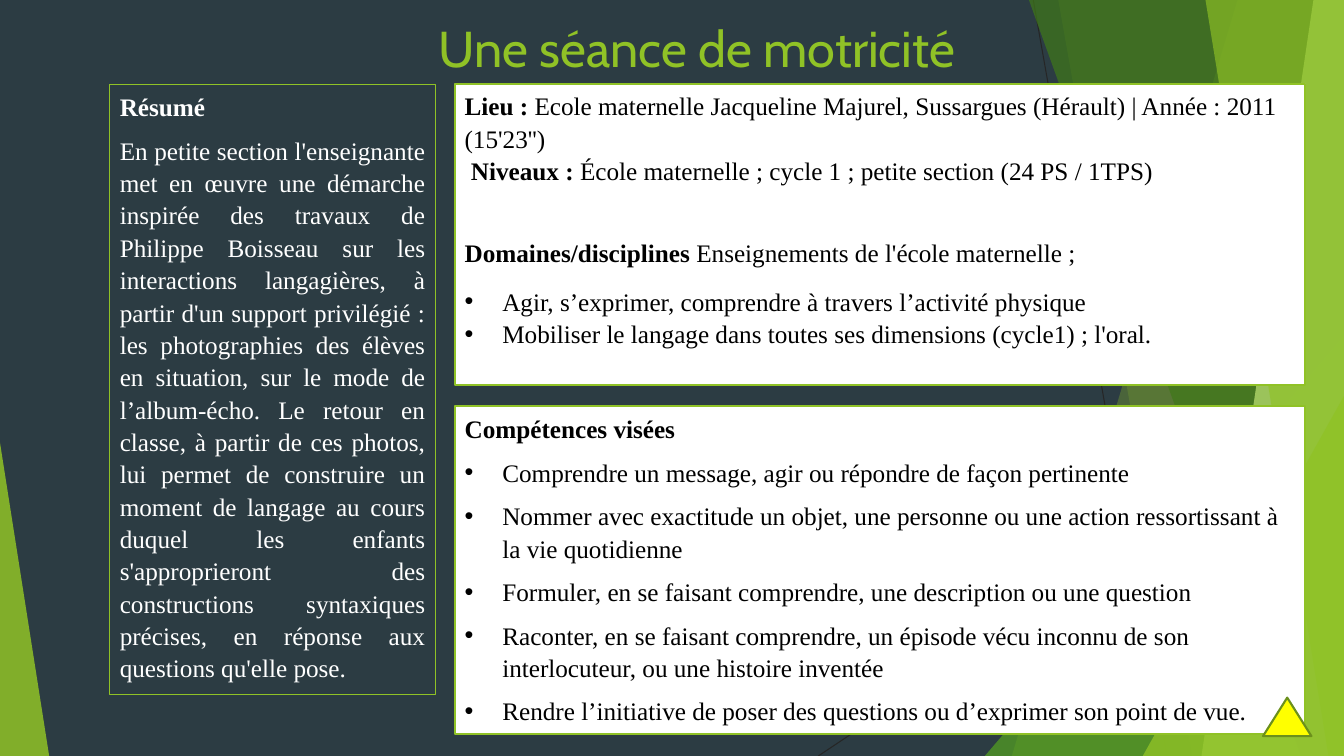
from lxml import etree
from pptx import Presentation
from pptx.dml.color import RGBColor
from pptx.enum.shapes import MSO_CONNECTOR, MSO_SHAPE
from pptx.enum.text import MSO_ANCHOR, PP_ALIGN
from pptx.oxml.ns import qn
from pptx.util import Cm, Pt

PAGE_W, PAGE_H = 33.87, 19.05
GREEN, WHITE, BLACK = "90C226", "FFFFFF", "000000"
SERIF = "Times New Roman"


def rgb(color):
    return RGBColor.from_string(color)


def style(sp, fill=None, line=None, width=0.75, opacity=100):
    """Set fill, outline and opacity, without a shadow."""
    sp.shadow.inherit = False
    if fill:
        sp.fill.solid()
        sp.fill.fore_color.rgb = rgb(fill)
        if opacity < 100:
            clr = sp.fill._xPr.find(qn("a:solidFill"))[0]
            etree.SubElement(clr, qn("a:alpha"), val=str(opacity * 1000))
    else:
        sp.fill.background()
    if line:
        sp.line.color.rgb = rgb(line)
        sp.line.width = Pt(width)
    else:
        sp.line.fill.background()


def add_shape(s, kind, box, **look):
    sp = s.shapes.add_shape(kind, *map(Cm, box))
    style(sp, **look)
    return sp


def add_run(p, text, size=18, color=BLACK, font=SERIF, bold=False):
    r = p.add_run()
    r.text = text
    r.font.size, r.font.name, r.font.bold = Pt(size), font, bold
    r.font.color.rgb = rgb(color)


def add_para(tf, *parts, after=0, align=PP_ALIGN.LEFT, bullet=False, **fmt):
    """Add a paragraph; a part is plain text or a (bold text,) tuple."""
    p = tf.paragraphs[0]
    if p.runs:
        p = tf.add_paragraph()
    p.alignment, p.line_spacing, p.space_after = align, 1.07, Pt(after)
    if bullet:
        pPr = p._p.get_or_add_pPr()
        pPr.set("marL", str(Cm(0.95)))
        pPr.set("indent", str(-Cm(0.95)))
        etree.SubElement(pPr, qn("a:buFont"), typeface="Arial")
        etree.SubElement(pPr, qn("a:buChar"), char="•")
    for part in parts:
        bold = isinstance(part, tuple)
        add_run(p, part[0] if bold else part, bold=bold, **fmt)


def add_panel(s, box, **look):
    sp = add_shape(s, MSO_SHAPE.RECTANGLE, box, line=GREEN, **look)
    tf = sp.text_frame
    tf.word_wrap, tf.vertical_anchor = True, MSO_ANCHOR.TOP
    return tf


def add_ray(s, x1, y1, x2, y2):
    c = s.shapes.add_connector(MSO_CONNECTOR.STRAIGHT, *map(Cm, (x1, y1, x2, y2)))
    c.line.color.rgb, c.line.width = rgb("262626"), Pt(0.75)
    etree.SubElement(c._element.spPr, qn("a:effectLst"))


def add_facet(s, top_x, bottom_x, color, opacity):
    """Full-height band from a slanted left edge to the right of the page."""
    corners = [(top_x, 0), (PAGE_W, 0), (PAGE_W, PAGE_H), (bottom_x, PAGE_H)]
    pts = [(x * 100, y * 100) for x, y in corners]
    fb = s.shapes.build_freeform(*pts[0], scale=Cm(0.01))
    fb.add_line_segments(pts[1:], close=True)
    style(fb.convert_to_shape(), fill=color, opacity=opacity)


def add_corner(s, w, h, apex, color, opacity):
    """Right triangle in a bottom corner: apex 0 is left, 1 is right."""
    box = (apex * (PAGE_W - w), PAGE_H - h, w, h)
    sp = add_shape(s, MSO_SHAPE.ISOSCELES_TRIANGLE, box, fill=color, opacity=opacity)
    sp.adjustments[0] = apex


def add_backdrop(s):
    s.background.fill.solid()
    s.background.fill.fore_color.rgb = rgb("2C3C43")
    add_ray(s, 26.04, 0, 29.41, PAGE_H)
    add_ray(s, PAGE_W, 10.24, 20.62, PAGE_H)
    add_facet(s, 31.19, 25.5, GREEN, 30)
    add_facet(s, 26.67, 30.05, GREEN, 20)
    add_corner(s, 9.05, 10.59, 1, "54A021", 72)
    add_facet(s, 25.93, 32.79, "3F7819", 70)
    add_facet(s, 33.1, 30.28, "C0E474", 70)
    add_facet(s, 30.38, 33.48, GREEN, 65)
    add_corner(s, 5.07, 9.07, 1, GREEN, 80)
    add_corner(s, 1.24, 7.9, 0, GREEN, 85)


def add_title(s, box):
    tf = s.shapes.add_textbox(*map(Cm, box)).text_frame
    tf.word_wrap, tf.vertical_anchor = True, MSO_ANCHOR.MIDDLE
    p = tf.paragraphs[0]
    p.alignment = PP_ALIGN.CENTER
    add_run(p, "Une séance de motricité", size=36, color=GREEN, font="Cabin")


def add_summary(s, box):
    tf = add_panel(s, box)
    add_para(tf, ("Résumé",), after=8, color=WHITE)
    add_para(
        tf,
        "En petite section l'enseignante met en œuvre une démarche inspirée des "
        "travaux de Philippe Boisseau sur les interactions langagières, à partir "
        "d'un support privilégié : les photographies des élèves en situation, sur "
        "le mode de l’album-écho. Le retour en classe, à partir de ces photos, lui "
        "permet de construire un moment de langage au cours duquel les enfants "
        "s'approprieront des constructions syntaxiques précises, en réponse aux "
        "questions qu'elle pose.",
        after=12, align=PP_ALIGN.JUSTIFY, color=WHITE)


def add_context(s, box):
    tf = add_panel(s, box, fill=WHITE, width=1.5)
    add_para(tf, ("Lieu :",), " Ecole maternelle Jacqueline Majurel, Sussargues "
             "(Hérault) | Année : 2011 (15'23'')")
    add_para(tf, (" Niveaux : ",),
             "École maternelle ; cycle 1 ; petite section (24 PS / 1TPS)", after=35)
    add_para(tf, ("Domaines/disciplines ",),
             "Enseignements de l'école maternelle ;", after=12)
    for text in ("Agir, s’exprimer, comprendre à travers l’activité physique",
                 "Mobiliser le langage dans toutes ses dimensions (cycle1) ; l'oral."):
        add_para(tf, text, bullet=True)


def add_skills(s, box):
    tf = add_panel(s, box, fill=WHITE, width=1.5)
    add_para(tf, ("Compétences visées",), after=8)
    for text in (
        "Comprendre un message, agir ou répondre de façon pertinente",
        "Nommer avec exactitude un objet, une personne ou une action ressortissant "
        "à la vie quotidienne",
        "Formuler, en se faisant comprendre, une description ou une question",
        "Raconter, en se faisant comprendre, un épisode vécu inconnu de son "
        "interlocuteur, ou une histoire inventée",
        "Rendre l’initiative de poser des questions ou d’exprimer son point de vue.",
    ):
        add_para(tf, text, after=8, bullet=True)
    # Yellow marker over the bottom right corner
    x, y, w, h = box
    add_shape(s, MSO_SHAPE.FLOWCHART_EXTRACT, (x + w - 1.07, y + h - 0.92, 1.22, 0.97),
              fill="FFFF00", line="6B901C", width=1.5)


def main():
    prs = Presentation()
    prs.slide_width, prs.slide_height = Cm(PAGE_W), Cm(PAGE_H)
    s = prs.slides.add_slide(prs.slide_layouts[6])
    add_backdrop(s)
    add_title(s, (3.43, 0.3, 28.27, 1.8))
    add_summary(s, (2.77, 2.13, 8.2, 15.37))
    add_context(s, (11.46, 2.11, 21.44, 7.59))
    add_skills(s, (11.46, 10.24, 21.44, 8.26))
    prs.save("out.pptx")


if __name__ == "__main__":
    main()
